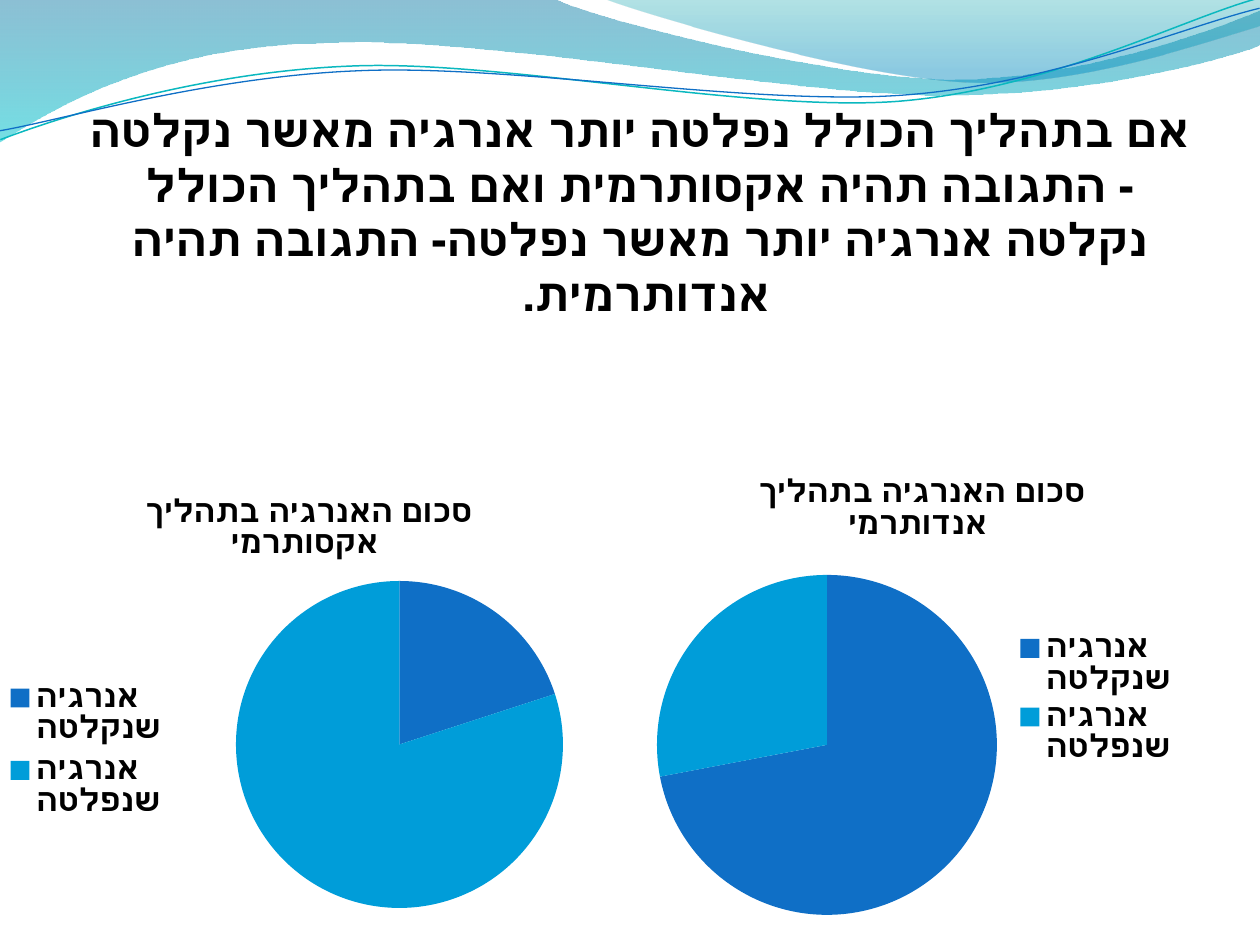
from lxml.etree import SubElement
from pptx import Presentation
from pptx.chart.data import CategoryChartData as Data
from pptx.dml.color import RGBColor as RGB
from pptx.enum.chart import XL_CHART_TYPE as Kind, XL_LEGEND_POSITION as Side
from pptx.enum.text import PP_ALIGN as Align
from pptx.oxml import parse_xml
from pptx.oxml.ns import nsdecls, qn
from pptx.util import Pt

PX = 914400 / 126
FONT = "Vollkorn"
BLACK = RGB(0, 0, 0)
BLUE = RGB(0x0F, 0x6F, 0xC6)
SKY = RGB(0x00, 0x9D, 0xD9)
TEAL = RGB(0x0A, 0xB8, 0xBF)
DEEP = RGB(0x00, 0x74, 0xA1)
AQUA = RGB(0x00, 0xC6, 0xCF)
SEA = RGB(0x00, 0xA1, 0xA9)
OCEAN = RGB(0x00, 0x8B, 0xBF)

BODY = ("אם בתהליך הכולל נפלטה יותר אנרגיה מאשר נקלטה - התגובה תהיה "
        "אקסותרמית ואם בתהליך הכולל נקלטה אנרגיה יותר מאשר נפלטה- "
        "התגובה תהיה אנדותרמית. ")
CATS = ["אנרגיה שנקלטה", "אנרגיה שנפלטה "]

# Each outline is a start point, then Bezier steps (6 numbers) or lines (2).
WAVE = [(0, 0), (554, -1), (600, 21, 837, 79, 955, 79),
        (1075, 79, 1207, 33, 1260, 11), (1261, 45),
        (1239, 55, 1096, 96, 940, 95), (784, 95, 481, 35, 324, 43),
        (163, 45, 58, 105, -1, 142), (0, 0)]
CREST = [(604, -1), (641, 14, 859, 78, 969, 82),
         (1079, 87, 1211, 40, 1260, 26), (1260, 0), (604, -1)]
# The thin lines are given level and turned afterwards.
TURN = 357.3
UPPER = [(-2, 110), (59, 90, 200, 52, 350, 53),
         (499, 53, 745, 118, 896, 114), (1049, 109, 1184, 45, 1261, 28)]
LOWER = [(-2, 101), (57, 94, 207, 57, 357, 58),
         (509, 58, 750, 112, 902, 108), (1052, 104, 1188, 52, 1262, 38)]


def emu(*vals):
    return [round(v * PX) for v in vals]


def trace(slide, steps, close):
    """Build the outline, then join each three points into one Bezier."""
    pts = [emu(*step[i:i + 2]) for step in steps
           for i in range(0, len(step), 2)]
    pen = slide.shapes.build_freeform(*pts[0])
    pen.add_line_segments(pts[1:], close=close)
    shape = pen.convert_to_shape()
    shape.shadow.inherit = False
    nodes = iter(list(shape._element.iter(qn("a:lnTo"))))
    for step in steps[1:]:
        head = next(nodes)
        if len(step) == 6:
            head.tag = qn("a:cubicBezTo")
            for node in (next(nodes), next(nodes)):
                head.append(node[0])
                node.getparent().remove(node)
    return shape


def add_band(slide, steps, stops):
    """Draw a closed shape with a see-through gradient, top to bottom."""
    shape = trace(slide, steps, True)
    shape.line.fill.background()
    shape.fill.gradient()
    shape.fill.gradient_angle = 270
    for stop, (pos, color, alpha) in zip(shape.fill.gradient_stops, stops):
        stop.position = pos
        stop.color.rgb = color
    tags = shape.fill._xPr.iter(qn("a:srgbClr"))
    for tag, (pos, color, alpha) in zip(tags, stops):
        SubElement(tag, qn("a:alpha"), val=str(alpha * 1000))


def add_line(slide, steps, color, width):
    shape = trace(slide, steps, False)
    shape.rotation = TURN
    shape.fill.background()
    shape.line.color.rgb = color
    shape.line.width = Pt(width)


def style(font, size, bold=True, color=BLACK):
    font.name, font.size, font.bold = FONT, Pt(size), bold
    font.color.rgb = color


def write(frame, text, size, align=Align.CENTER, lead=None):
    para = frame.paragraphs[0]
    para.alignment = align
    para._p.get_or_add_pPr().set("rtl", "1")
    if lead:
        para.line_spacing = Pt(lead)
    run = para.add_run()
    run.text = text
    style(run.font, size)


def add_text(slide, box, text, **form):
    frame = slide.shapes.add_textbox(*emu(*box)).text_frame
    frame.word_wrap = True
    write(frame, text, **form)


def layout(frame, box, inner=False):
    """Make a chart layout that puts a part at a box given in slide px."""
    x, y, w, h = frame
    vals = {"x": (box[0] - x) / w, "y": (box[1] - y) / h,
            "w": box[2] / w, "h": box[3] / h}
    node = parse_xml(f'<c:layout {nsdecls("c")}><c:manualLayout/></c:layout>')
    man = node[0]
    if inner:
        SubElement(man, qn("c:layoutTarget"), val="inner")
    for name in "xy":
        SubElement(man, qn(f"c:{name}Mode"), val="edge")
    for name, val in vals.items():
        SubElement(man, qn(f"c:{name}"), val=f"{val:.4f}")
    return node


def add_pie(slide, box, title, vals, disc, key, side):
    data = Data()
    data.categories = CATS
    data.add_series("Series 1", vals)
    chart = slide.shapes.add_chart(Kind.PIE, *emu(*box), data).chart
    style(chart.font, 18)
    chart.has_title = True
    write(chart.chart_title.text_frame, title, 18)
    chart.chart_title.include_in_layout = False

    plot = chart.plots[0]
    plot.vary_by_categories = True
    for i, color in enumerate((BLUE, SKY)):
        fill = plot.series[0].points[i].format.fill
        fill.solid()
        fill.fore_color.rgb = color

    chart.has_legend = True
    legend = chart.legend
    legend.position = side
    legend.include_in_layout = False
    style(legend.font, 18)
    legend._element.find(qn("c:legendPos")).addnext(layout(box, key))
    area = chart._chartSpace.chart.plotArea
    for old in area.findall(qn("c:layout")):
        area.remove(old)
    area.insert(0, layout(box, disc, inner=True))


def main():
    prs = Presentation()
    prs.slide_width, prs.slide_height = emu(1260, 945)
    slide = prs.slides.add_slide(prs.slide_layouts[6])

    add_band(slide, WAVE, [(0, DEEP, 45), (1, AQUA, 55)])
    add_band(slide, CREST, [(0, SEA, 30), (0.8, OCEAN, 45)])
    add_line(slide, UPPER, TEAL, 0.85)
    add_line(slide, LOWER, BLUE, 0.75)
    add_text(slide, (64, 96, 1153, 291), BODY, size=26, lead=31.2)
    add_pie(slide, (640, 452, 564, 493), "סכום האנרגיה בתהליך אנדותרמי ",
            (72, 28), (657, 575, 340, 340), (1014, 627, 172, 143), Side.RIGHT)
    add_pie(slide, (4, 472, 610, 452), "סכום האנרגיה בתהליך אקסותרמי ",
            (20, 80), (236, 581, 327, 327), (4, 673, 172, 154), Side.LEFT)
    prs.save("out.pptx")


if __name__ == "__main__":
    main()
